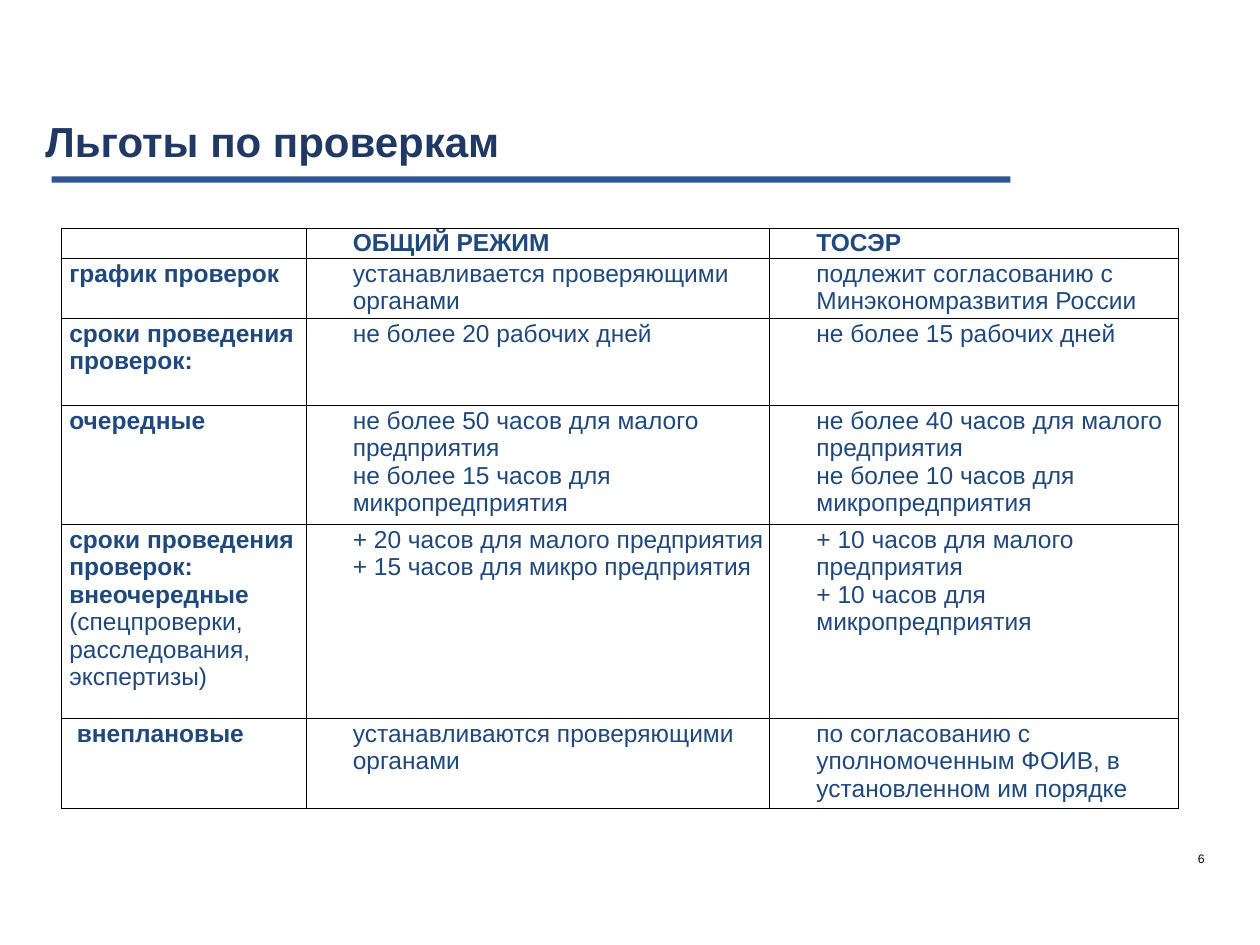
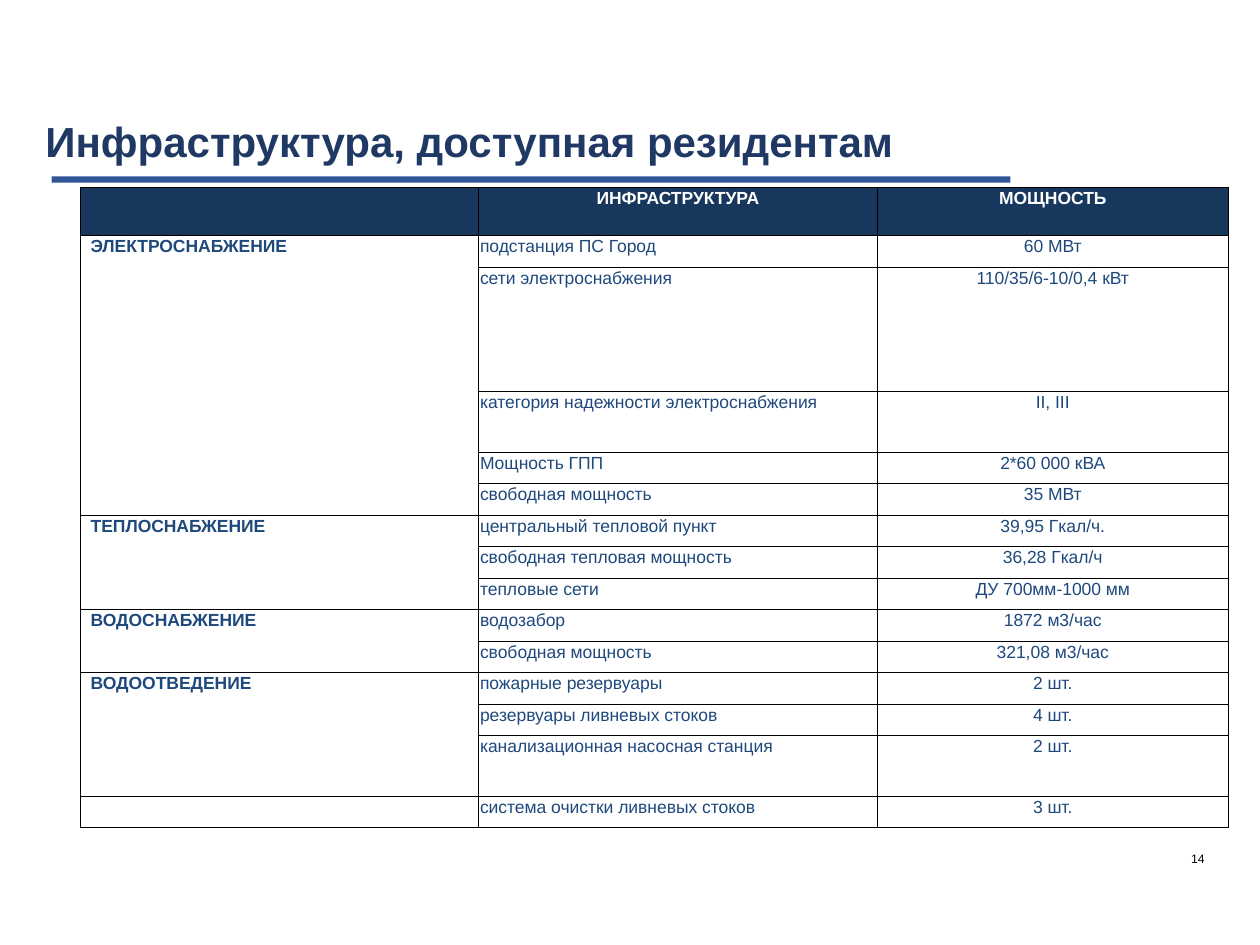
"""Build two slides on inspection benefits and infrastructure for residents."""
from lxml.etree import SubElement
from pptx import Presentation
from pptx.dml.color import RGBColor
from pptx.enum.shapes import MSO_SHAPE as Shape
from pptx.enum.text import MSO_ANCHOR as Anchor, MSO_AUTO_SIZE as AutoSize, PP_ALIGN as Align
from pptx.oxml import parse_xml
from pptx.oxml.ns import nsdecls, qn
from pptx.util import Inches, Pt

FONT = "Arial"
NAVY = RGBColor(0x20, 0x38, 0x64)
RULE_BLUE = RGBColor(0x2F, 0x55, 0x97)
TEXT_BLUE = RGBColor(0x1F, 0x49, 0x7D)
HEADER_BLUE = RGBColor(0x17, 0x37, 0x5D)
WHITE = RGBColor(0xFF, 0xFF, 0xFF)
BLACK = RGBColor(0, 0, 0)

INSPECTIONS = [
    (0.23, "", "ОБЩИЙ РЕЖИМ", "ТОСЭР"),
    (0.46, "график проверок", "устанавливается проверяющими органами",
     "подлежит согласованию с Минэкономразвития России"),
    (0.69, "сроки проведения проверок:", "не более 20 рабочих дней",
     "не более 15 рабочих дней"),
    (0.88, "очередные",
     "не более 50 часов для малого предприятия\nне более 15 часов для микропредприятия",
     "не более 40 часов для малого предприятия\nне более 10 часов для микропредприятия"),
    (1.54, "сроки проведения проверок: внеочередные ",
     "+ 20 часов для малого предприятия\n+ 15 часов для микро предприятия",
     "+ 10 часов для малого предприятия\n+ 10 часов для микропредприятия"),
    (0.69, "внеплановые", "устанавливаются проверяющими органами",
     "по согласованию с уполномоченным ФОИВ, в установленном им порядке"),
]
EXTRA_NOTES = {"сроки проведения проверок: внеочередные ":
               "(cпецпроверки, расследования, экспертизы)"}

UTILITIES = [
    ("ЭЛЕКТРОСНАБЖЕНИЕ", [
        (0.25, "подстанция ПС Город", "60 МВт"),
        (0.99, "сети электроснабжения", "110/35/6-10/0,4 кВт"),
        (0.48, "категория надежности электроснабжения", "II, III"),
        (0.25, "Мощность ГПП", "2*60 000 кВА"),
        (0.25, "свободная мощность", "35 МВт")]),
    ("ТЕПЛОСНАБЖЕНИЕ", [
        (0.25, "центральный тепловой пункт", "39,95 Гкал/ч."),
        (0.25, "свободная тепловая мощность", "36,28 Гкал/ч"),
        (0.25, "тепловые сети", "ДУ 700мм-1000 мм")]),
    ("ВОДОСНАБЖЕНИЕ", [
        (0.25, "водозабор", "1872 м3/час"),
        (0.25, "свободная мощность", "321,08 м3/час")]),
    ("ВОДООТВЕДЕНИЕ", [
        (0.25, "пожарные резервуары", "2 шт."),
        (0.25, "резервуары ливневых стоков", "4 шт."),
        (0.48, "канализационная насосная станция", "2 шт.")]),
    ("", [(0.25, "система очистки ливневых стоков", "3 шт.")]),
]


def write_text(frame, text, *, size, color, bold=False, align=Align.LEFT, note="", spacing=None):
    """Write lines of text as paragraphs, with an optional regular-weight note at the end."""
    frame.word_wrap = True
    for index, line in enumerate(text.split("\n")):
        para = frame.paragraphs[0] if index == 0 else frame.add_paragraph()
        para.alignment = align
        if spacing:
            para.line_spacing = spacing
        for words, weight in ((line, bold), (note, False)):
            if words:
                span = para.add_run()
                span.text = words
                span.font.name = FONT
                span.font.size = Pt(size)
                span.font.bold = weight
                span.font.color.rgb = color
        if not line:
            SubElement(para._p, qn("a:endParaRPr"), sz=str(size * 100))


def clear_margins(frame):
    """Remove the inner margins of a text frame."""
    frame.margin_left = frame.margin_right = frame.margin_top = frame.margin_bottom = 0


def add_page(deck, title, number):
    """Add a page with its title, rule and page number."""
    page = deck.slides.add_slide(deck.slide_layouts[5])
    heading = page.shapes.title
    heading.left, heading.top = Inches(0.36), Inches(0.96)
    heading.width, heading.height = Inches(7.42), Inches(0.36)
    frame = heading.text_frame
    clear_margins(frame)
    frame.auto_size = AutoSize.NONE
    frame.vertical_anchor = Anchor.TOP
    write_text(frame, title, size=24, color=NAVY, bold=True, spacing=0.9)

    rule = page.shapes.add_shape(
        Shape.RECTANGLE, Inches(0.41), Inches(1.4), Inches(7.61), Inches(0.05))
    rule.shadow.inherit = False
    rule.fill.solid()
    rule.fill.fore_color.rgb = RULE_BLUE
    rule.line.fill.background()

    box = page.shapes.add_textbox(Inches(8.95), Inches(6.67), Inches(0.61), Inches(0.2))
    clear_margins(box.text_frame)
    box.text_frame.vertical_anchor = Anchor.BOTTOM
    write_text(box.text_frame, str(number), size=7, color=BLACK, align=Align.RIGHT)
    return page


def add_grid(page, left, top, widths, heights):
    """Add an unstyled table with the given column widths and row heights."""
    table = page.shapes.add_table(
        len(heights), len(widths), Inches(left), Inches(top),
        Inches(sum(widths)), Inches(sum(heights))).table
    table.first_row = table.horz_banding = False
    for column, width in zip(table.columns, widths):
        column.width = Inches(width)
    for row, height in zip(table.rows, heights):
        row.height = Inches(height)
    return table


def fill_cell(cell, text, *, indent=0.01, fill=None, **text_format):
    """Set a cell's text, margins, fill and thin black borders."""
    cell.margin_left = Inches(indent)
    cell.margin_right = cell.margin_top = Inches(0.01)
    cell.margin_bottom = 0
    if fill is None:
        cell.fill.background()
    else:
        cell.fill.solid()
        cell.fill.fore_color.rgb = fill
    for index, side in enumerate(("lnL", "lnR", "lnT", "lnB")):
        border = parse_xml(
            f'<a:{side} {nsdecls("a")} w="{Pt(0.5)}"><a:solidFill>'
            f'<a:srgbClr val="{BLACK}"/></a:solidFill></a:{side}>')
        cell._tc.get_or_add_tcPr().insert(index, border)
    write_text(cell.text_frame, text, **text_format)


def add_inspection_table(page):
    """Compare inspection rules in the general and the special regime."""
    table = add_grid(page, 0.49, 1.81, [1.94, 3.68, 3.24], [row[0] for row in INSPECTIONS])
    last = len(INSPECTIONS) - 1
    for row, (_, *texts) in enumerate(INSPECTIONS):
        for column, text in enumerate(texts):
            label_indent = 0.12 if row == last else 0.06
            fill_cell(table.cell(row, column), text, size=14, color=TEXT_BLUE,
                      indent=0.37 if column else label_indent,
                      bold=row == 0 or column == 0, note=EXTRA_NOTES.get(text, ""))


def add_utility_table(page):
    """List the utilities and their capacity, grouped by kind."""
    heights = [0.38] + [item[0] for _, items in UTILITIES for item in items]
    table = add_grid(page, 0.64, 1.49, [3.16, 3.16, 2.79], heights)
    for column, text in enumerate(("", "ИНФРАСТРУКТУРА", "МОЩНОСТЬ")):
        fill_cell(table.cell(0, column), text, size=10, color=WHITE, bold=True,
                  align=Align.CENTER, fill=HEADER_BLUE)
    row = 1
    for group, items in UTILITIES:
        first = row
        for _, name, capacity in items:
            fill_cell(table.cell(row, 0), group if row == first else "", size=10,
                      color=TEXT_BLUE, bold=True, indent=0.08)
            fill_cell(table.cell(row, 1), name, size=10, color=TEXT_BLUE)
            fill_cell(table.cell(row, 2), capacity, size=10, color=TEXT_BLUE, align=Align.CENTER)
            row += 1
        if len(items) > 1:
            table.cell(first, 0).merge(table.cell(row - 1, 0))


def main():
    """Build and save the deck."""
    deck = Presentation()
    deck.slide_width, deck.slide_height = Inches(10), Inches(7.5)
    add_inspection_table(add_page(deck, "Льготы по проверкам", 6))
    add_utility_table(add_page(deck, "Инфраструктура, доступная резидентам", 14))
    deck.save("out.pptx")


if __name__ == "__main__":
    main()
